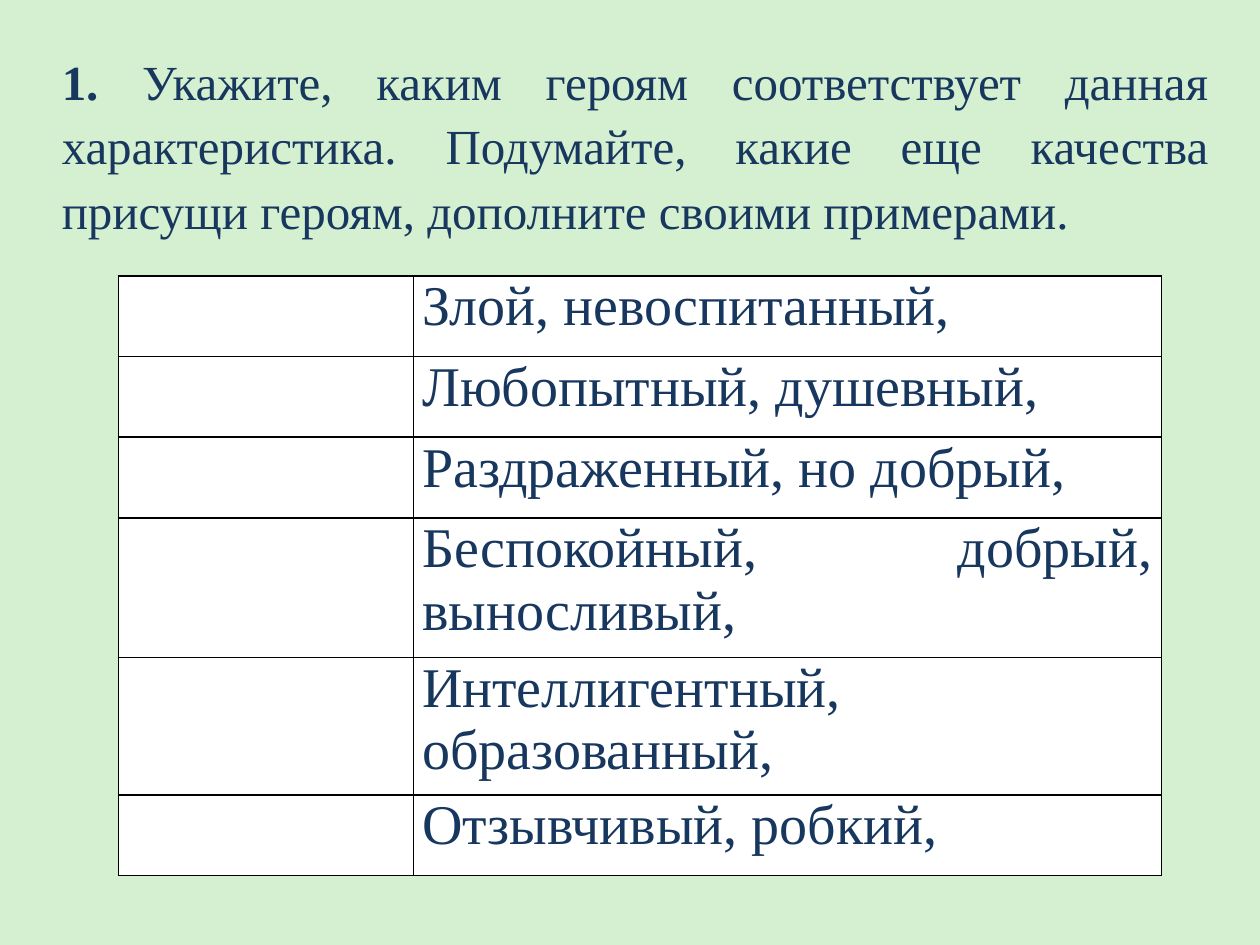
from lxml import etree
from pptx import Presentation, util as u
from pptx.dml.color import RGBColor
from pptx.enum import text
from pptx.oxml.ns import qn

GREEN = RGBColor(0xD5, 0xEF, 0xD1)
NAVY = RGBColor(0x17, 0x37, 0x5E)
WHITE = RGBColor(0xFF, 0xFF, 0xFF)
BLACK = RGBColor(0, 0, 0)

TRAITS = [
    ("Злой, невоспитанный,", 0.64),
    ("Любопытный, душевный,", 0.64),
    ("Раздраженный, но добрый,", 0.64),
    ("Беспокойный, добрый, выносливый,", 1.11),
    ("Интеллигентный, образованный,", 1.09),
    ("Отзывчивый, робкий,", 0.64),
]
COLS = [2.34, 5.94]
TASK = [
    ("1.", True),
    (" Укажите, каким героям соответствует данная характеристика. "
     "Подумайте, какие еще качества присущи героям, "
     "дополните своими примерами.", False),
]


def add_run(p, words, size, bold=False):
    r = p.add_run()
    r.text = words
    for key, value in {"name": "Times New Roman", "size": u.Pt(size), "bold": bold}.items():
        setattr(r.font, key, value)
    r.font.color.rgb = NAVY


def add_border(cell, side):
    ln = etree.SubElement(cell._tc.get_or_add_tcPr(), qn(f"a:{side}"), w=str(u.Pt(1)))
    fill = etree.SubElement(ln, qn("a:solidFill"))
    etree.SubElement(fill, qn("a:srgbClr"), val=str(BLACK))


prs = Presentation()
prs.slide_width, prs.slide_height = u.Inches(10), u.Inches(7.5)
s = prs.slides.add_slide(prs.slide_layouts[5])
s.background.fill.solid()
s.background.fill.fore_color.rgb = GREEN

title = s.shapes.title
box = {"left": 0.39, "top": 0.31, "width": 9.3, "height": 1.51}
for key, value in box.items():
    setattr(title, key, u.Inches(value))
tf = title.text_frame
frame = {"word_wrap": True, "auto_size": text.MSO_AUTO_SIZE.SHAPE_TO_FIT_TEXT,
         "vertical_anchor": text.MSO_ANCHOR.TOP}
for key, value in frame.items():
    setattr(tf, key, value)
p = tf.paragraphs[0]
p.alignment = text.PP_ALIGN.JUSTIFY
p.line_spacing = 1.1
for words, bold in TASK:
    add_run(p, words, 28, bold)

height = sum(row for _, row in TRAITS)
tbl = s.shapes.add_table(len(TRAITS), len(COLS), u.Inches(0.94), u.Inches(2.19),
                         u.Inches(sum(COLS)), u.Inches(height)).table
tbl.first_row = tbl.horz_banding = False
for col, width in zip(tbl.columns, COLS):
    col.width = u.Inches(width)

margins = {"margin_left": 0.07, "margin_right": 0.07, "margin_top": 0, "margin_bottom": 0}
for i, (trait, row) in enumerate(TRAITS):
    tbl.rows[i].height = u.Inches(row)
    for cell in tbl.rows[i].cells:
        for key, value in margins.items():
            setattr(cell, key, u.Inches(value))
        for side in ("lnL", "lnR", "lnT", "lnB"):
            add_border(cell, side)
        cell.fill.solid()
        cell.fill.fore_color.rgb = WHITE
    p = tbl.cell(i, 1).text_frame.paragraphs[0]
    p.alignment = text.PP_ALIGN.JUSTIFY
    add_run(p, trait, 32)

prs.save("out.pptx")
